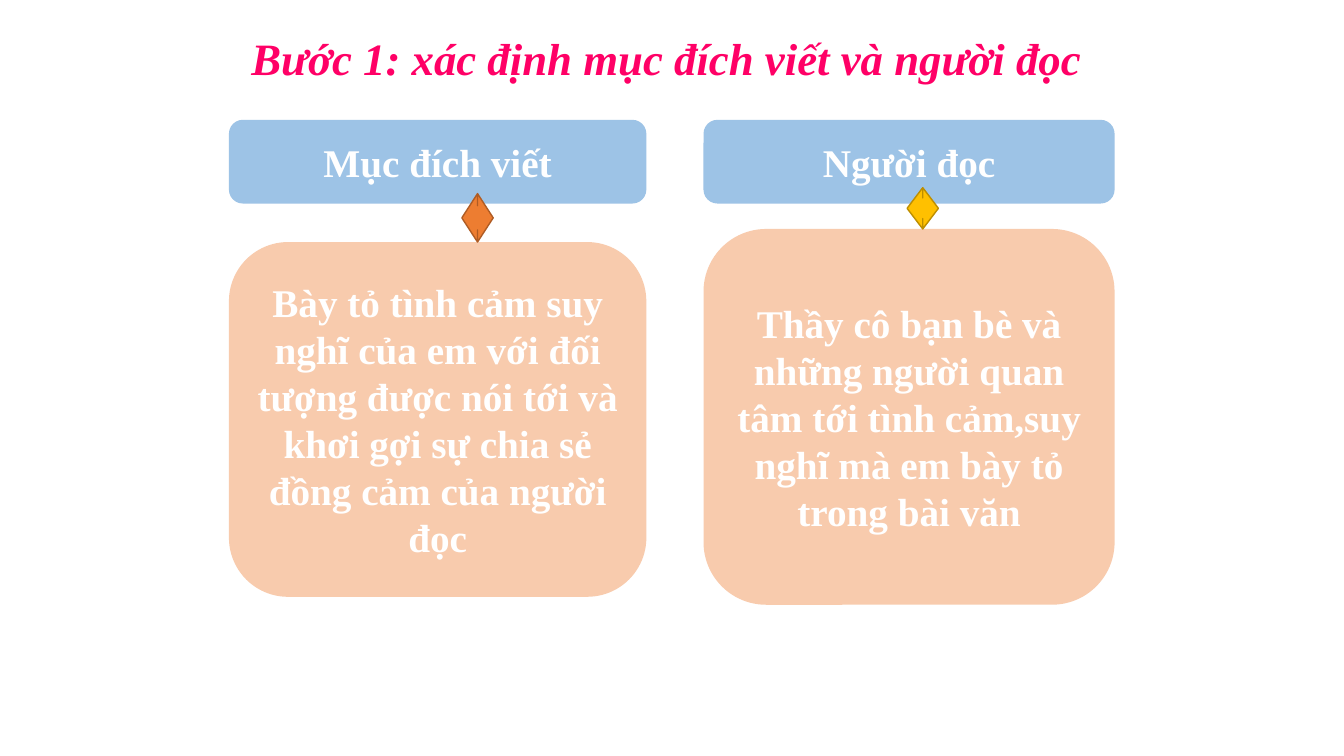
import dataclasses
import pptx
import pptx.dml.color
import pptx.enum.shapes
import pptx.enum.text
import pptx.util

Cm = pptx.util.Cm
Kind = pptx.enum.shapes.MSO_SHAPE


@dataclasses.dataclass(frozen=True)
class Theme:
    """Colours, font and type sizes of the slide."""
    font: str = "Times New Roman"
    title: str = "FF0066"
    text: str = "FFFFFF"
    head: str = "9DC3E6"
    body: str = "F8CBAD"
    big: int = 32
    mid: int = 28


THEME = Theme()


def paint(fill, tone):
    """Give a fill one solid colour."""
    fill.solid()
    fill.fore_color.rgb = pptx.dml.color.RGBColor.from_string(tone)


def write(frame, text, size, tone, slant=False):
    """Set centred bold text in a frame."""
    frame.word_wrap = True
    frame.text = text
    para = frame.paragraphs[0]
    para.alignment = pptx.enum.text.PP_ALIGN.CENTER
    font = para.runs[0].font
    font.name, font.size = THEME.font, pptx.util.Pt(size)
    font.bold, font.italic = True, slant
    font.color.rgb = pptx.dml.color.RGBColor.from_string(tone)


def place(slide, kind, box, tone, edge=None):
    """Add a filled shape at a box given in centimetres."""
    shape = slide.shapes.add_shape(kind, *map(Cm, box))
    shape.shadow.inherit = False
    paint(shape.fill, tone)
    if edge:
        paint(shape.line.fill, edge)
        shape.line.width = pptx.util.Pt(1)
    else:
        shape.line.fill.background()
    return shape


def card(slide, box, text, tone):
    """Add a rounded card with text in its middle."""
    shape = place(slide, Kind.ROUNDED_RECTANGLE, box, tone)
    shape.text_frame.vertical_anchor = pptx.enum.text.MSO_ANCHOR.MIDDLE
    write(shape.text_frame, text, THEME.mid, THEME.text)


def title(slide, box, text):
    """Add the slide title."""
    shape = slide.shapes.add_textbox(*map(Cm, box))
    write(shape.text_frame, text, THEME.big, THEME.title, slant=True)


def column(slide, box, head, body, drop, mark):
    """Add a head card, a body card drop below the top, and a mark between."""
    left, top, width, height = box
    shift, tall, tone, edge = mark
    card(slide, (left, top, width, 2.11), head, THEME.head)
    card(slide, (left, top + drop, width, height - drop), body, THEME.body)
    spot = (left + shift, top + drop - tall, 0.79, tall)
    place(slide, Kind.LEFT_RIGHT_ARROW, spot, tone, edge)


def main():
    """Build the slide and save it."""
    deck = pptx.Presentation()
    deck.slide_width, deck.slide_height = Cm(33.87), Cm(19.05)
    slide = deck.slides.add_slide(deck.slide_layouts[6])
    title(slide, (5.51, 0.64, 22.58, 1.7),
          "Bước 1: xác định mục đích viết và người đọc")
    column(slide, (5.77, 3.02, 10.52, 12.02), "Mục đích viết",
           "Bày tỏ tình cảm suy nghĩ của em với đối tượng được nói tới "
           "và khơi gợi sự chia sẻ đồng cảm của người đọc",
           3.08, (5.87, 1.22, "ED7D31", "AF5C24"))
    column(slide, (17.73, 3.02, 10.36, 12.22), "Người đọc",
           "Thầy cô bạn bè và những người quan tâm tới tình cảm,suy nghĩ "
           "mà em bày tỏ trong bài văn",
           2.75, (5.13, 1.04, "FFC000", "BD8E00"))
    deck.save("out.pptx")


if __name__ == "__main__":
    main()
